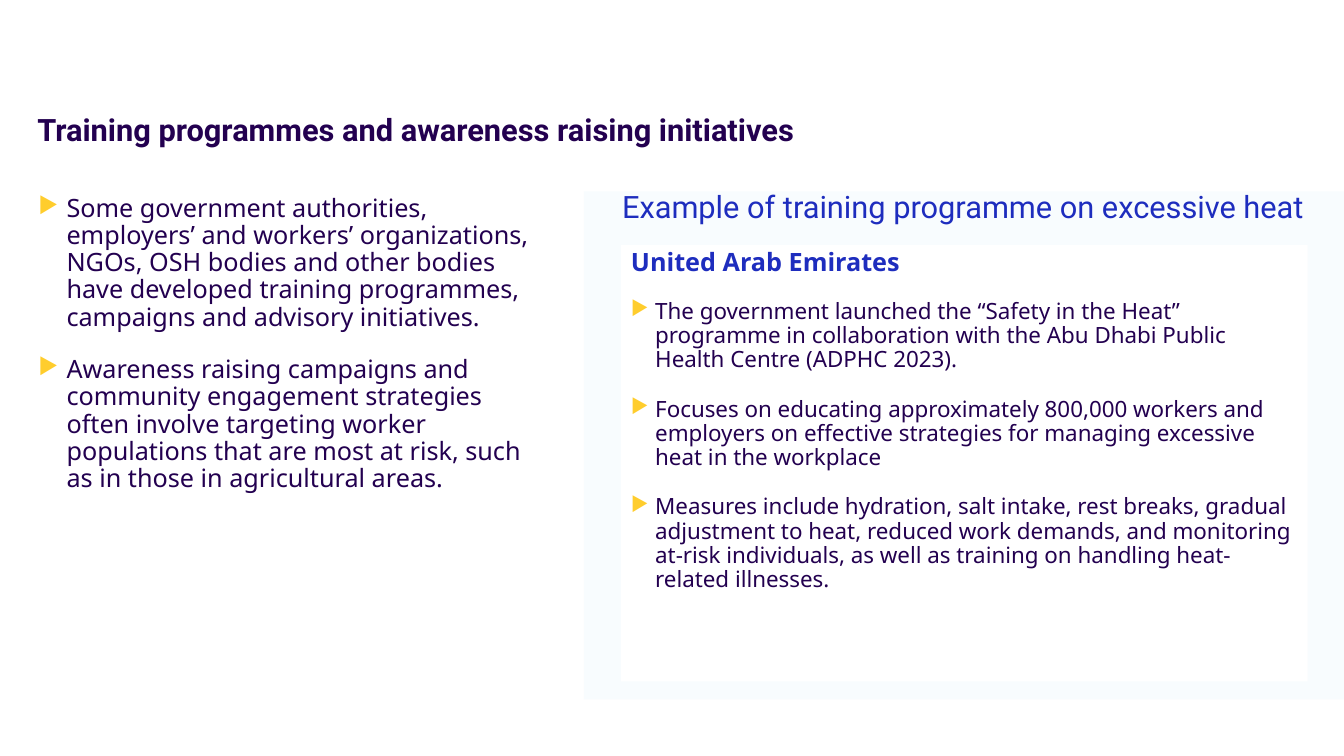
from lxml import etree
from pptx import Presentation
from pptx.dml.color import RGBColor
from pptx.enum.shapes import MSO_SHAPE
from pptx.enum.text import MSO_ANCHOR, PP_ALIGN
from pptx.oxml.ns import qn
from pptx.util import Inches, Pt

RECT = MSO_SHAPE.RECTANGLE
TOP = MSO_ANCHOR.TOP
LEFT = PP_ALIGN.LEFT

PURPLE, BLUE, YELLOW = "230050", "1E2DBE", "FFCD2D"
PALE, WHITE = "F8FCFE", "FFFFFF"
HEADING_FONT, BODY_FONT = "Roboto", "Noto Sans"

INITIATIVES = [
    "Some government authorities, employers’ and workers’ organizations, NGOs, OSH bodies "
    "and other bodies have developed training programmes, campaigns and advisory initiatives.",
    "Awareness raising campaigns and community engagement strategies often involve targeting "
    "worker populations that are most at risk, such as in those in agricultural areas.",
]
EMIRATES_POINTS = [
    "The government launched the “Safety in the Heat” programme in collaboration with the "
    "Abu Dhabi Public Health Centre (ADPHC 2023).",
    "Focuses on educating approximately 800,000 workers and employers on effective strategies "
    "for managing excessive heat in the workplace",
    "Measures include hydration, salt intake, rest breaks, gradual adjustment to heat, reduced "
    "work demands, and monitoring at-risk individuals, as well as training on handling "
    "heat-related illnesses.",
]


def rgb(value):
    return RGBColor.from_string(value)


def add_bullet(p, indent):
    """Give the paragraph a yellow triangle with a hanging indent in inches."""
    pPr = p._p.get_or_add_pPr()
    pPr.set("marL", str(Inches(indent)))
    pPr.set("indent", str(-Inches(indent)))
    color = etree.SubElement(pPr, qn("a:buClr"))
    etree.SubElement(color, qn("a:srgbClr"), val=YELLOW)
    etree.SubElement(pPr, qn("a:buSzPct"), val="90000")
    etree.SubElement(pPr, qn("a:buChar"), char="▶")


def write(tf, text, size=18, font=BODY_FONT, color=PURPLE, bold=False,
          before=0, after=0, indent=0):
    """Add a paragraph, using the empty first one if it is still free."""
    first = not tf.text
    p = tf.paragraphs[0] if first else tf.add_paragraph()
    if indent:
        add_bullet(p, indent)
    p.alignment = LEFT
    p.line_spacing = 0.9
    p.space_before = Pt(0 if first else before)
    p.space_after = Pt(after)
    r = p.add_run()
    r.text = text
    r.font.size, r.font.name, r.font.bold = Pt(size), font, bold
    r.font.color.rgb = rgb(color)


class TrainingSlide:
    def __init__(self, prs):
        self.s = prs.slides.add_slide(prs.slide_layouts[6])

    def frame(self, sp, side, top):
        tf = sp.text_frame
        tf.word_wrap = True
        tf.vertical_anchor = TOP
        tf.margin_left = tf.margin_right = Inches(side)
        tf.margin_top = tf.margin_bottom = Inches(top)
        return tf

    def text_box(self, *box):
        sp = self.s.shapes.add_textbox(*map(Inches, box))
        return self.frame(sp, 0, 0)

    def panel(self, *box, fill, side=0.1, top=0.05):
        sp = self.s.shapes.add_shape(RECT, *map(Inches, box))
        sp.shadow.inherit = False
        sp.fill.solid()
        sp.fill.fore_color.rgb = rgb(fill)
        sp.line.fill.background()
        return self.frame(sp, side, top)


def main():
    prs = Presentation()
    prs.slide_width, prs.slide_height = Inches(13.33), Inches(7.5)
    slide = TrainingSlide(prs)

    title = slide.text_box(0.37, 1.14, 12.6, 0.55)
    write(title, "Training programmes and awareness raising initiatives",
          size=22, font=HEADING_FONT, bold=True)

    initiatives = slide.text_box(0.38, 1.94, 4.89, 5.04)
    for text in INITIATIVES:
        write(initiatives, text, before=6, after=12, indent=0.28)

    example = slide.panel(5.79, 1.9, 7.54, 5.04, fill=PALE, side=0.38, top=0)
    write(example, "Example of training programme on excessive heat",
          size=22, font=HEADING_FONT, color=BLUE)

    emirates = slide.panel(6.16, 2.43, 6.81, 4.33, fill=WHITE)
    write(emirates, "United Arab Emirates", color=BLUE, bold=True, after=4.5)
    for text in EMIRATES_POINTS:
        write(emirates, text, size=16, before=12, after=6, indent=0.24)

    prs.save("out.pptx")


if __name__ == "__main__":
    main()
